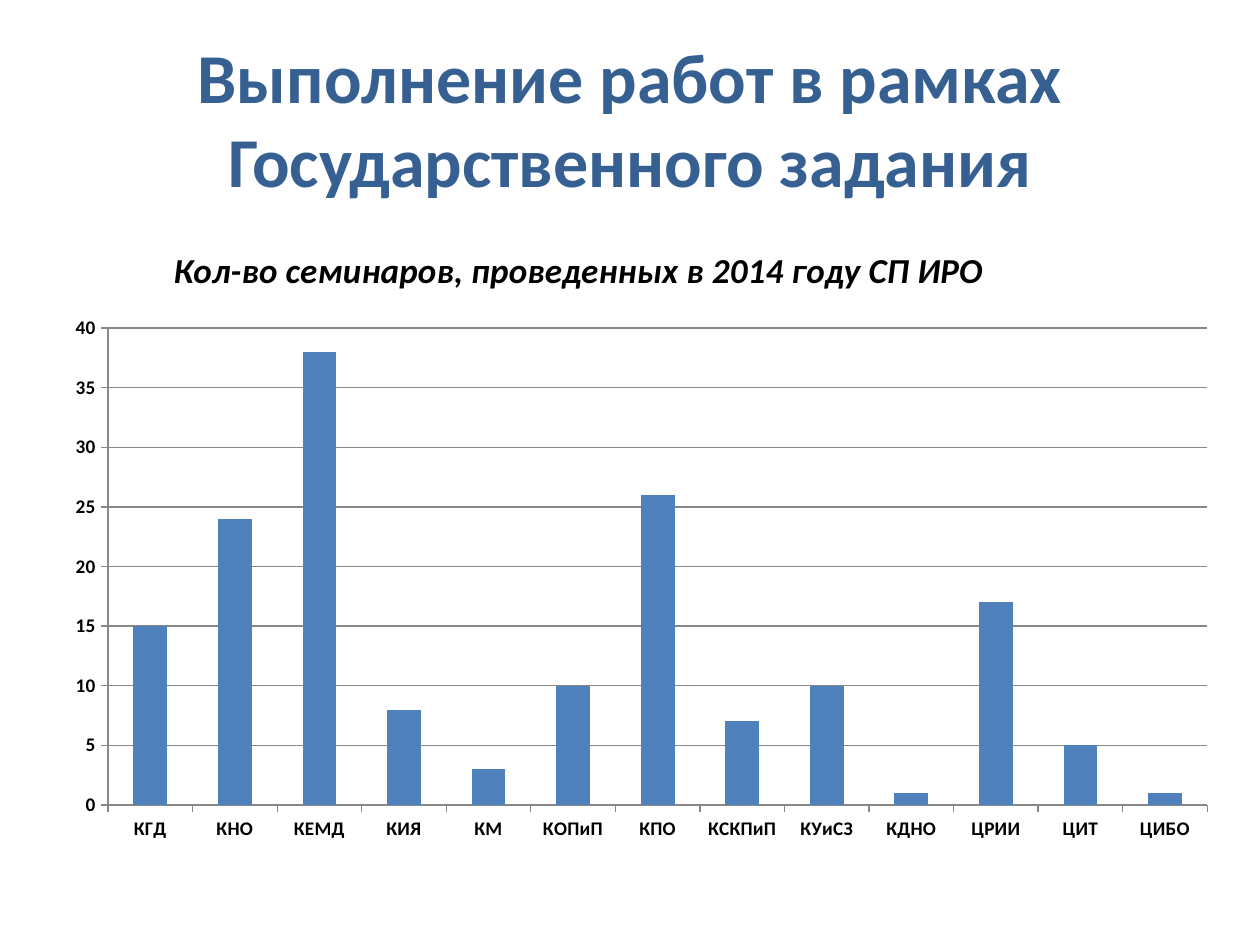
from dataclasses import dataclass

from lxml import etree
from pptx import Presentation
from pptx import util as u
from pptx.chart.data import CategoryChartData
from pptx.dml.color import RGBColor
from pptx.enum import chart as charts, text
from pptx.oxml.ns import qn

EMU_PER_PX = 914400 / 126
FONT = "Calibri"
BLACK, GREY, BLUE, NAVY = "000000", "878787", "4F81BD", "376092"


@dataclass(frozen=True)
class Box:
    left: int
    top: int
    width: int
    height: int

    def emu(self) -> list[u.Emu]:
        return [px(n) for n in (self.left, self.top, self.width, self.height)]


@dataclass(frozen=True)
class Department:
    name: str
    seminars: int


DEPARTMENTS = [
    Department("КГД", 15),
    Department("КНО", 24),
    Department("КЕМД", 38),
    Department("КИЯ", 8),
    Department("КМ", 3),
    Department("КОПиП", 10),
    Department("КПО", 26),
    Department("КСКПиП", 7),
    Department("КУиСЗ", 10),
    Department("КДНО", 1),
    Department("ЦРИИ", 17),
    Department("ЦИТ", 5),
    Department("ЦИБО", 1),
]


def px(length: int) -> u.Emu:
    return u.Emu(round(length * EMU_PER_PX))


def color(value: str) -> RGBColor:
    return RGBColor.from_string(value)


def style_font(font, *, size: int, fill: str = BLACK, bold: bool = True,
               italic: bool = False) -> None:
    font.name = FONT
    font.size = u.Pt(size)
    font.bold = bold
    font.italic = italic
    font.color.rgb = color(fill)


def write_text(frame, content: str, *, align=text.PP_ALIGN.CENTER, **style) -> None:
    paragraph = frame.paragraphs[0]
    paragraph.alignment = align
    run = paragraph.add_run()
    run.text = content
    style_font(run.font, **style)


def set_layout(parent, index: int, **values) -> None:
    for old in parent.findall(qn("c:layout")):
        parent.remove(old)
    layout = etree.Element(qn("c:layout"))
    manual = etree.SubElement(layout, qn("c:manualLayout"))
    for tag, value in values.items():
        etree.SubElement(manual, qn(f"c:{tag}")).set("val", str(value))
    parent.insert(index, layout)


def style_axis(axis) -> None:
    style_font(axis.tick_labels.font, size=11)
    axis.major_tick_mark = charts.XL_TICK_MARK.OUTSIDE
    axis.minor_tick_mark = charts.XL_TICK_MARK.NONE
    axis.format.line.color.rgb = color(GREY)
    axis.format.line.width = u.Pt(0.75)


def add_heading(slide, box: Box, content: str) -> None:
    shape = slide.shapes.add_textbox(*box.emu())
    frame = shape.text_frame
    frame.word_wrap = True
    frame.vertical_anchor = text.MSO_ANCHOR.MIDDLE
    write_text(frame, content, size=40, fill=NAVY)


def add_seminar_chart(slide, box: Box, departments: list[Department]) -> None:
    data = CategoryChartData()
    data.categories = [department.name for department in departments]
    data.add_series("Series 1", [department.seminars for department in departments])
    chart = slide.shapes.add_chart(
        charts.XL_CHART_TYPE.COLUMN_CLUSTERED, *box.emu(), data).chart
    style_font(chart.font, size=10, bold=False)
    chart.has_legend = False

    chart.has_title = True
    title = chart.chart_title
    write_text(title.text_frame, "Кол-во семинаров, проведенных в 2014 году СП ИРО",
               size=20, italic=True)
    set_layout(title._element, 1, xMode="edge", yMode="edge", x=0.1, y=0.03)

    plot = chart.plots[0]
    plot.gap_width = 150
    plot.vary_by_categories = False
    fill = plot.series[0].format.fill
    fill.solid()
    fill.fore_color.rgb = color(BLUE)
    plot_area = chart._chartSpace.find(f".//{qn('c:plotArea')}")
    set_layout(plot_area, 0, layoutTarget="inner", xMode="edge", yMode="edge",
               x=0.05, y=0.17, w=0.93, h=0.75)

    style_axis(chart.category_axis)
    values = chart.value_axis
    style_axis(values)
    values.minimum_scale, values.maximum_scale, values.major_unit = 0, 40, 5
    values.has_major_gridlines = True
    values.major_gridlines.format.line.color.rgb = color(GREY)
    values.major_gridlines.format.line.width = u.Pt(0.75)


def main() -> None:
    presentation = Presentation()
    presentation.slide_width, presentation.slide_height = px(1260), px(945)
    slide = presentation.slides.add_slide(presentation.slide_layouts[6])
    add_heading(slide, Box(63, 38, 1134, 158),
                "Выполнение работ в рамках Государственного задания")
    add_seminar_chart(slide, Box(49, 220, 1182, 636), DEPARTMENTS)
    presentation.save("out.pptx")


if __name__ == "__main__":
    main()
